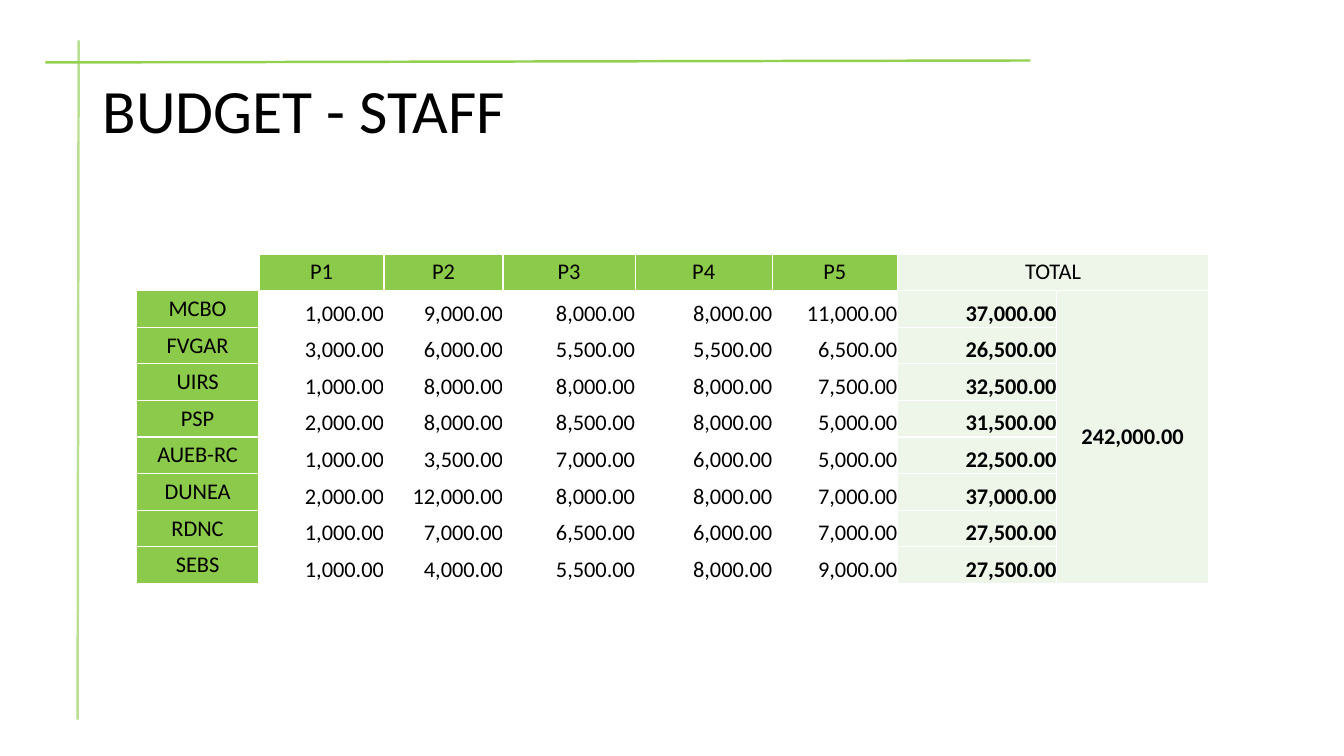
"""Build the staff budget slide with its cost table."""
from lxml.etree import SubElement
from pptx import Presentation
from pptx.dml.color import RGBColor
from pptx.enum.shapes import MSO_CONNECTOR
from pptx.enum.text import MSO_ANCHOR, PP_ALIGN
from pptx.oxml.ns import qn
from pptx.util import Inches, Pt

TITLE = "BUDGET - STAFF"
PACKAGES = ["P1", "P2", "P3", "P4", "P5"]
COSTS = {
    "MCBO": [1000, 9000, 8000, 8000, 11000],
    "FVGAR": [3000, 6000, 5500, 5500, 6500],
    "UIRS": [1000, 8000, 8000, 8000, 7500],
    "PSP": [2000, 8000, 8500, 8000, 5000],
    "AUEB-RC": [1000, 3500, 7000, 6000, 5000],
    "DUNEA": [2000, 12000, 8000, 8000, 7000],
    "RDNC": [1000, 7000, 6500, 6000, 7000],
    "SEBS": [1000, 4000, 5500, 8000, 9000],
}
COLUMN_WIDTHS = [1.22, 1.24, 1.18, 1.31, 1.36, 1.24, 1.58, 1.51]
RULES = [
    ((0.78, 0.4), (0.77, 7.14), "B9DF93"),
    ((0.45, 0.62), (10.22, 0.6), "92D050"),
]
FONT = "Calibri"
BLACK, WHITE, GREEN, PALE = "000000", "FFFFFF", "8BCA4B", "EEF6E9"


def color(value):
    return RGBColor.from_string(value)


def add_run(paragraph, text, size, bold=False):
    run = paragraph.add_run()
    run.text = text
    run.font.name = FONT
    run.font.size = Pt(size)
    run.font.bold = bold
    run.font.color.rgb = color(BLACK)


def add_rule(slide, start, end, line_color):
    points = [Inches(value) for value in start + end]
    rule = slide.shapes.add_connector(MSO_CONNECTOR.STRAIGHT, *points)
    rule.line.color.rgb = color(line_color)
    rule.line.width = Pt(1.75)
    SubElement(rule._element.spPr, qn("a:effectLst"))


def prepare_cell(cell):
    cell.margin_left = cell.margin_right = cell.margin_top = cell.margin_bottom = 0
    properties = cell._tc.get_or_add_tcPr()
    for side in ("a:lnL", "a:lnR", "a:lnT", "a:lnB"):
        border = SubElement(properties, qn(side), w=str(Pt(1)))
        fill = SubElement(border, qn("a:solidFill"))
        SubElement(fill, qn("a:srgbClr"), val=WHITE)
    cell.fill.background()


def fill_cell(cell, text, fill, alignment=PP_ALIGN.CENTER, anchor=MSO_ANCHOR.MIDDLE, bold=False):
    cell.fill.solid()
    cell.fill.fore_color.rgb = color(fill)
    cell.vertical_anchor = anchor
    paragraph = cell.text_frame.paragraphs[0]
    paragraph.alignment = alignment
    add_run(paragraph, text, 16, bold)


def add_budget_table(slide):
    frame = slide.shapes.add_table(
        len(COSTS) + 1, len(COLUMN_WIDTHS),
        Inches(1.35), Inches(2.52), Inches(sum(COLUMN_WIDTHS)), Inches(3.27))
    table = frame.table
    table.first_row = table.horz_banding = False
    for column, width in zip(table.columns, COLUMN_WIDTHS):
        column.width = Inches(width)
    for cell in table.iter_cells():
        prepare_cell(cell)

    total_column = len(PACKAGES) + 1
    grand_column = total_column + 1
    table.cell(0, total_column).merge(table.cell(0, grand_column))
    table.cell(1, grand_column).merge(table.cell(len(COSTS), grand_column))

    for column, package in enumerate(PACKAGES, 1):
        fill_cell(table.cell(0, column), package, GREEN)
    fill_cell(table.cell(0, total_column), "TOTAL", PALE)
    for row, (partner, amounts) in enumerate(COSTS.items(), 1):
        fill_cell(table.cell(row, 0), partner, GREEN)
        for column, amount in enumerate(amounts + [sum(amounts)], 1):
            is_total = column == total_column
            fill_cell(table.cell(row, column), f"{amount:,.2f}", PALE if is_total else WHITE,
                      PP_ALIGN.RIGHT, MSO_ANCHOR.BOTTOM, is_total)
    grand_total = sum(map(sum, COSTS.values()))
    fill_cell(table.cell(1, grand_column), f"{grand_total:,.2f}", PALE, bold=True)


def main():
    presentation = Presentation()
    presentation.slide_width = Inches(13.33)
    presentation.slide_height = Inches(7.5)
    slide = presentation.slides.add_slide(presentation.slide_layouts[5])
    for start, end, line_color in RULES:
        add_rule(slide, start, end, line_color)

    title = slide.shapes.title
    title.left, title.top = Inches(0.92), Inches(0.4)
    title.width, title.height = Inches(11.5), Inches(1.45)
    title.text_frame.vertical_anchor = MSO_ANCHOR.MIDDLE
    paragraph = title.text_frame.paragraphs[0]
    paragraph.alignment = PP_ALIGN.LEFT
    paragraph.line_spacing = 0.9
    add_run(paragraph, TITLE, 44)

    add_budget_table(slide)
    presentation.save("out.pptx")


if __name__ == "__main__":
    main()
